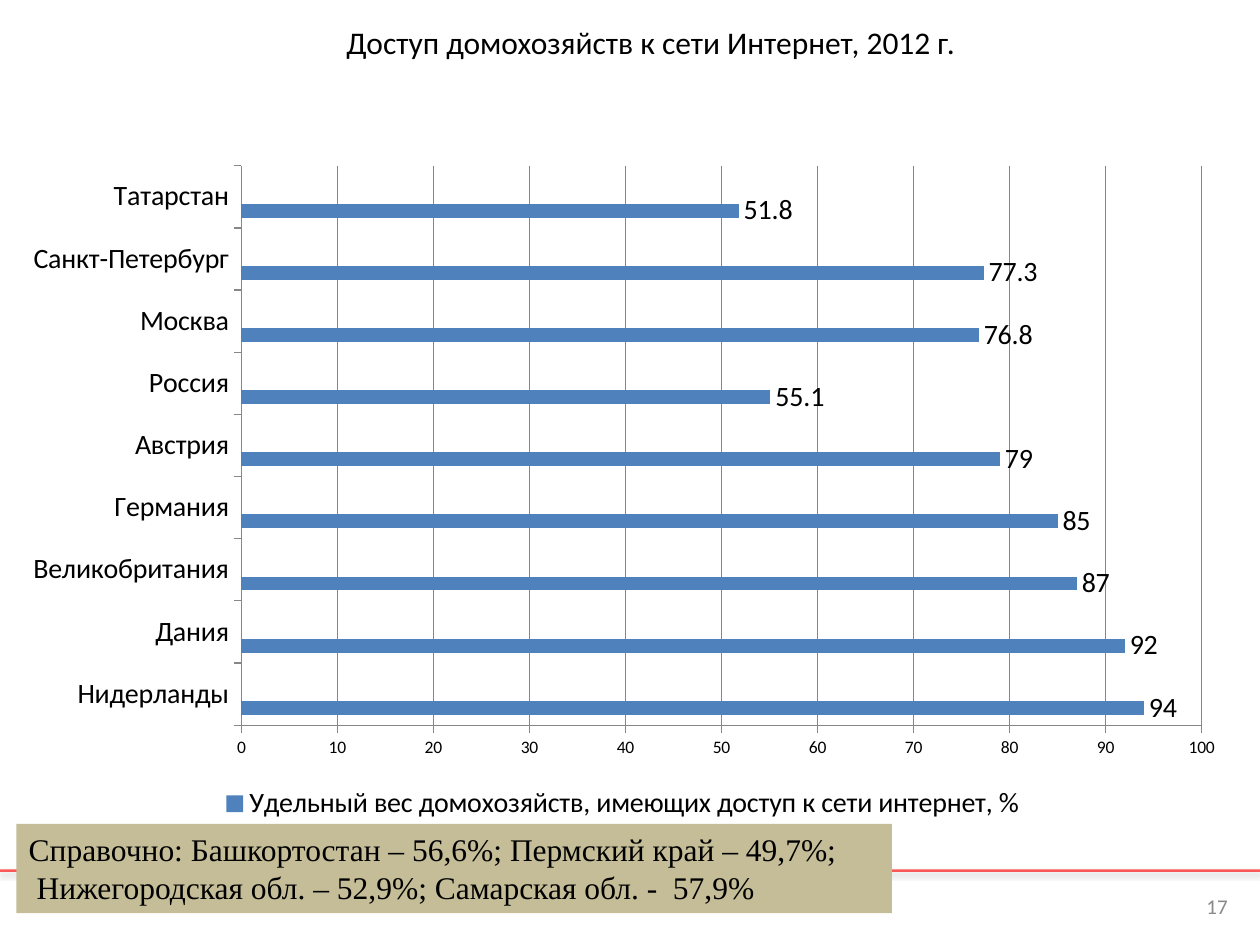
from typing import NamedTuple

from lxml import etree
from pptx import Presentation
from pptx.chart.data import CategoryChartData
from pptx.dml.color import RGBColor
from pptx.enum import chart as charts, shapes, text
from pptx.oxml import parse_xml
from pptx.oxml.ns import nsdecls, qn
from pptx.util import Cm, Pt

COLORS = {
    "text": "000000", "number": "898989", "note": "C4BD97", "rule": "FF0000",
    "grid": "878787", "access": "4F81BD", "second": "C0504D", "third": "9BBB59",
}


class Box(NamedTuple):
    left: float
    top: float
    width: float
    height: float

    def lengths(self) -> list:
        return [Cm(side) for side in self]


class Style(NamedTuple):
    size: int
    font: str = "Calibri"
    color: str = "text"
    align: text.PP_ALIGN = text.PP_ALIGN.LEFT


class Access(NamedTuple):
    place: str
    percent: float


HOUSEHOLDS = [
    Access("Нидерланды", 94), Access("Дания", 92), Access("Великобритания", 87),
    Access("Германия", 85), Access("Австрия", 79), Access("Россия", 55.1),
    Access("Москва", 76.8), Access("Санкт-Петербург", 77.3), Access("Татарстан", 51.8),
]
SERIES = {
    "Удельный вес домохозяйств, имеющих доступ к сети интернет, %": "access",
    "Столбец1": "second",
    "Столбец2": "third",
}


def rgb(name: str) -> RGBColor:
    return RGBColor.from_string(COLORS[name])


def set_font(font, size: int, family: str = "Calibri", color: str = "text") -> None:
    font.size, font.name, font.bold = Pt(size), family, False
    font.color.rgb = rgb(color)


def write(frame, lines: list[str], style: Style) -> None:
    for index, line in enumerate(lines):
        paragraph = frame.add_paragraph() if index else frame.paragraphs[0]
        paragraph.alignment = style.align
        run = paragraph.add_run()
        run.text = line
        set_font(run.font, style.size, style.font, style.color)


def draw_rule(slide) -> None:
    """Translucent red line with a soft shadow across the slide."""
    y = Cm(17.55)
    rule = slide.shapes.add_connector(shapes.MSO_CONNECTOR.STRAIGHT, 0, y, Cm(25.4), y)
    rule.line.width = Pt(1.5)
    rule.line.color.rgb = rgb("rule")
    properties = rule._element.spPr
    color = properties.find(".//" + qn("a:srgbClr"))
    etree.SubElement(color, qn("a:alpha"), val="64000")
    properties.append(parse_xml(
        f'<a:effectLst {nsdecls("a")}><a:outerShdw blurRad="39400" dist="20300" '
        'dir="5400000" rotWithShape="0"><a:srgbClr val="000000">'
        '<a:alpha val="38000"/></a:srgbClr></a:outerShdw></a:effectLst>'))


def style_axis(axis, size: int) -> None:
    set_font(axis.tick_labels.font, size)
    axis.format.line.color.rgb = rgb("grid")
    axis.major_tick_mark = charts.XL_TICK_MARK.OUTSIDE
    axis.minor_tick_mark = charts.XL_TICK_MARK.NONE


def place_plot(chart, **fractions: float) -> None:
    """Fix the inner plot area, given as fractions of the chart."""
    area = chart._chartSpace.chart.plotArea
    for old in area.findall(qn("c:layout")):
        area.remove(old)
    sides = "".join(f'<c:{side} val="{value}"/>' for side, value in fractions.items())
    area.insert(0, parse_xml(
        f'<c:layout {nsdecls("c")}><c:manualLayout><c:layoutTarget val="inner"/>'
        f'<c:xMode val="edge"/><c:yMode val="edge"/>{sides}'
        '</c:manualLayout></c:layout>'))


def draw_chart(slide, box: Box) -> None:
    data = CategoryChartData()
    data.categories = [entry.place for entry in HOUSEHOLDS]
    percents = [entry.percent for entry in HOUSEHOLDS]
    for name, color in SERIES.items():
        data.add_series(name, percents if color == "access" else [None] * len(percents))
    chart = slide.shapes.add_chart(
        charts.XL_CHART_TYPE.BAR_CLUSTERED, *box.lengths(), data).chart
    chart.has_title = False
    set_font(chart.font, 10)

    plot = chart.plots[0]
    plot.vary_by_categories = False
    plot.gap_width, plot.overlap = 150, 0
    for series, color in zip(plot.series, SERIES.values()):
        series.format.fill.solid()
        series.format.fill.fore_color.rgb = rgb(color)
        series.invert_if_negative = False
    labels = plot.series[0].data_labels
    labels.show_value = True
    labels.position = charts.XL_LABEL_POSITION.OUTSIDE_END
    set_font(labels.font, 16)

    style_axis(chart.category_axis, 16)
    scale = chart.value_axis
    style_axis(scale, 10)
    scale.minimum_scale, scale.maximum_scale, scale.major_unit = 0, 100, 10
    scale.has_major_gridlines = True
    scale.major_gridlines.format.line.color.rgb = rgb("grid")

    chart.has_legend = True
    legend = chart.legend
    legend.position = charts.XL_LEGEND_POSITION.BOTTOM
    legend.include_in_layout = False
    set_font(legend.font, 16)
    # A bar chart counts its legend entries from the last series.
    for index in (1, 0):
        legend._element.find(qn("c:legendPos")).addnext(parse_xml(
            f'<c:legendEntry {nsdecls("c")}><c:idx val="{index}"/>'
            '<c:delete val="1"/></c:legendEntry>'))
    place_plot(chart, x=0.19, y=0.02, w=0.78, h=0.83)


def draw_title(slide, box: Box) -> None:
    title = slide.shapes.title
    title.left, title.top, title.width, title.height = box.lengths()
    frame = title.text_frame
    frame.word_wrap = False
    frame.auto_size = text.MSO_AUTO_SIZE.SHAPE_TO_FIT_TEXT
    frame.vertical_anchor = text.MSO_ANCHOR.TOP
    write(frame, ["Доступ домохозяйств к сети Интернет, 2012 г."], Style(18))


def draw_number(slide, box: Box) -> None:
    frame = slide.shapes.add_textbox(*box.lengths()).text_frame
    frame.word_wrap = True
    frame.vertical_anchor = text.MSO_ANCHOR.MIDDLE
    write(frame, ["17"], Style(12, color="number", align=text.PP_ALIGN.RIGHT))


def draw_note(slide, box: Box) -> None:
    note = slide.shapes.add_shape(shapes.MSO_SHAPE.RECTANGLE, *box.lengths())
    note.shadow.inherit = False
    note.fill.solid()
    note.fill.fore_color.rgb = rgb("note")
    note.line.fill.background()
    frame = note.text_frame
    frame.word_wrap = True
    frame.auto_size = text.MSO_AUTO_SIZE.SHAPE_TO_FIT_TEXT
    frame.vertical_anchor = text.MSO_ANCHOR.TOP
    write(frame, ["Справочно: Башкортостан – 56,6%; Пермский край – 49,7%;",
                  " Нижегородская обл. – 52,9%; Самарская обл. -  57,9%"],
          Style(18, "Times New Roman"))


def main() -> None:
    deck = Presentation()
    deck.slide_width, deck.slide_height = Cm(25.4), Cm(19.05)
    slide = deck.slides.add_slide(deck.slide_layouts[5])
    draw_rule(slide)
    draw_chart(slide, Box(0.15, 3.07, 24.82, 13.59))
    draw_number(slide, Box(23.7, 17.75, 1.3, 1.02))
    draw_title(slide, Box(6.73, 0.33, 13.08, 1.02))
    draw_note(slide, Box(0.33, 16.61, 17.65, 1.8))
    deck.save("out.pptx")


if __name__ == "__main__":
    main()
